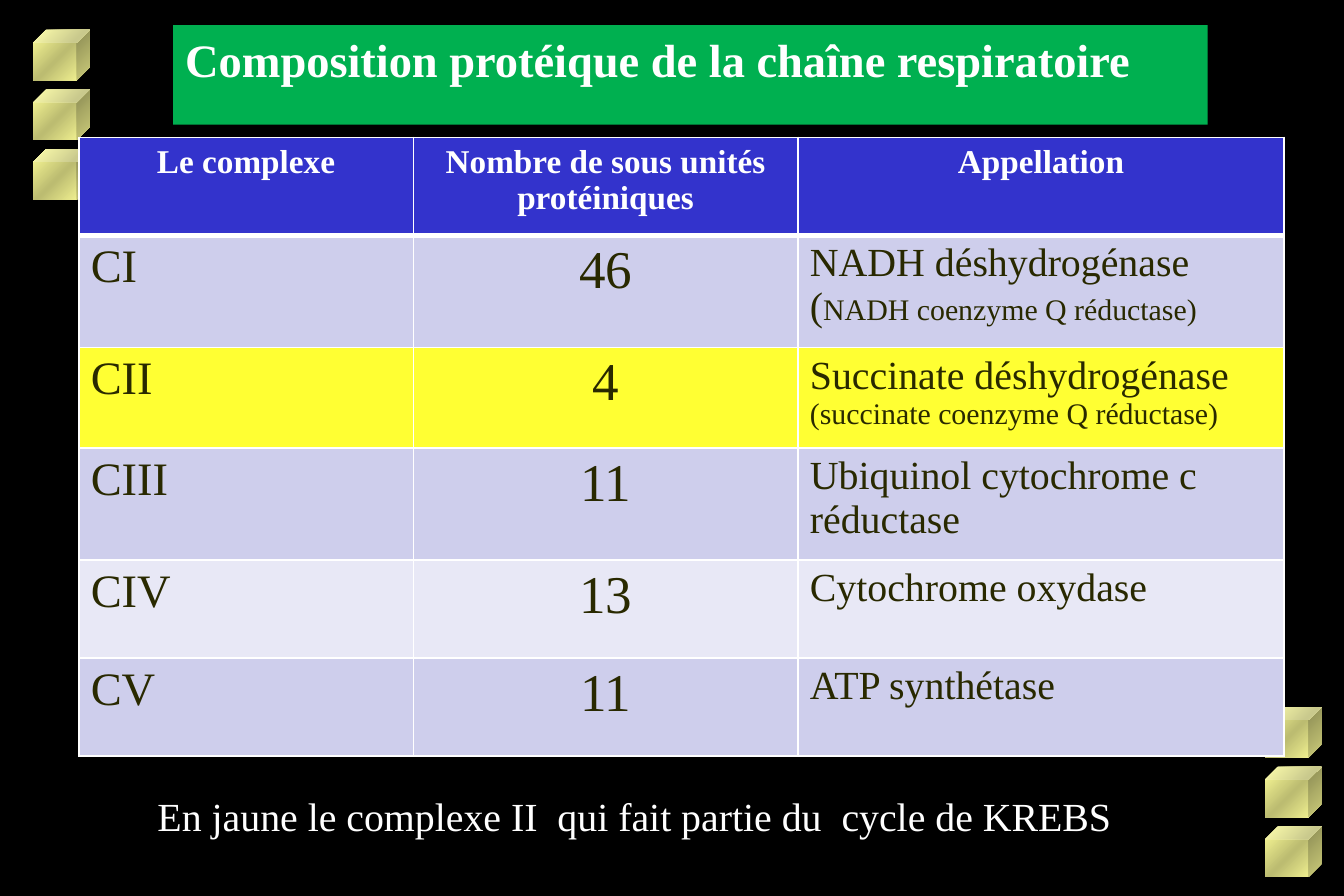
"""Build the slide on the protein composition of the respiratory chain."""
from copy import deepcopy
from dataclasses import dataclass

from lxml.etree import SubElement
from pptx import Presentation
from pptx.dml.color import RGBColor
from pptx.enum.shapes import MSO_SHAPE
from pptx.enum.text import MSO_ANCHOR, MSO_AUTO_SIZE, PP_ALIGN
from pptx.oxml.ns import qn
from pptx.util import Inches, Pt

FONT = "Times New Roman"
WHITE, BLACK, GREEN, BLUE = "FFFFFF", "000000", "00B050", "3333CC"
INK, LAVENDER, PALE, YELLOW = "292900", "CECEEC", "E8E8F6", "FFFF33"
CUBE_LIGHT, CUBE_DARK = "FFFF99", "BCBC71"
HEADINGS = ("Le complexe", "Nombre de sous unités protéiniques", "Appellation")
COLUMN_WIDTHS = (2.8, 3.22, 4.07)
HEADER_HEIGHT = 0.82


@dataclass(frozen=True)
class Complex:
    name: str
    subunits: int
    title: str
    detail: str
    fill: str
    height: float


@dataclass(frozen=True)
class CubeStack:
    left: float
    top: float


COMPLEXES = (
    Complex("CI", 46, "NADH déshydrogénase (", "NADH coenzyme Q réductase)", LAVENDER, 0.94),
    Complex("CII", 4, "Succinate déshydrogénase ", "(succinate coenzyme Q réductase)", YELLOW, 0.84),
    Complex("CIII", 11, "Ubiquinol cytochrome c réductase", "", LAVENDER, 0.94),
    Complex("CIV", 13, "Cytochrome oxydase", "", PALE, 0.82),
    Complex("CV", 11, "ATP synthétase", "", LAVENDER, 0.82),
)
CUBE_STACKS = (CubeStack(0.28, 0.25), CubeStack(10.59, 5.92))


def color(value: str) -> RGBColor:
    return RGBColor.from_string(value)


def paint(target, value: str) -> None:
    target.fill.solid()
    target.fill.fore_color.rgb = color(value)


def style(font, size: float, value: str, bold: bool = False) -> None:
    font.name, font.size, font.bold = FONT, Pt(size), bold
    font.color.rgb = color(value)


def place(shape, left: float, top: float, width: float, height: float) -> None:
    shape.left, shape.top = Inches(left), Inches(top)
    shape.width, shape.height = Inches(width), Inches(height)


def write_line(shape, text: str, size: float, bold: bool = False) -> None:
    frame = shape.text_frame
    frame.text, frame.word_wrap = text, True
    frame.auto_size = MSO_AUTO_SIZE.SHAPE_TO_FIT_TEXT
    frame.vertical_anchor = MSO_ANCHOR.TOP
    para = frame.paragraphs[0]
    para.alignment = PP_ALIGN.LEFT
    style(para.font, size, WHITE, bold)


def add_cubes(page, stack: CubeStack) -> None:
    for index in range(3):
        cube = page.shapes.add_shape(
            MSO_SHAPE.CUBE, Inches(stack.left), Inches(stack.top + index * 0.5),
            Inches(0.47), Inches(0.42))
        cube.shadow.inherit = False
        cube.line.fill.background()
        cube.fill.gradient()
        cube.fill.gradient_angle = 315
        stop_list = cube.element.spPr.find(qn("a:gradFill")).find(qn("a:gsLst"))
        stop_list.append(deepcopy(stop_list[-1]))
        stops = zip(cube.fill.gradient_stops, (0, 0.5, 1), (CUBE_LIGHT, CUBE_DARK, CUBE_LIGHT))
        for stop, position, value in stops:
            stop.position = position
            stop.color.rgb = color(value)


def set_borders(cell, top: float, bottom: float) -> None:
    properties = cell._tc.get_or_add_tcPr()
    sides = (("a:lnL", 1), ("a:lnR", 1), ("a:lnT", top), ("a:lnB", bottom))
    for index, (tag, width) in enumerate(sides):
        line = SubElement(properties, qn(tag), w=str(Pt(width)))
        SubElement(SubElement(line, qn("a:solidFill")), qn("a:srgbClr"), val=WHITE)
        properties.insert(index, line)


def fill_cell(cell, text: str, size: float, value: str, fill: str,
              centred: bool = False, bold: bool = False):
    cell.text = text
    para = cell.text_frame.paragraphs[0]
    para.alignment = PP_ALIGN.CENTER if centred else PP_ALIGN.LEFT
    style(para.font, size, value, bold)
    paint(cell, fill)
    return para


def add_composition_table(page) -> None:
    heights = (HEADER_HEIGHT, *(item.height for item in COMPLEXES))
    table = page.shapes.add_table(
        len(heights), len(HEADINGS), Inches(0.66), Inches(1.15),
        Inches(sum(COLUMN_WIDTHS)), Inches(sum(heights))).table
    for column, width in zip(table.columns, COLUMN_WIDTHS):
        column.width = Inches(width)
    for row, height in zip(table.rows, heights):
        row.height = Inches(height)
    for index, heading in enumerate(HEADINGS):
        fill_cell(table.cell(0, index), heading, 20, WHITE, BLUE, centred=True, bold=True)
    for index, item in enumerate(COMPLEXES, start=1):
        fill_cell(table.cell(index, 0), item.name, 28, INK, item.fill)
        fill_cell(table.cell(index, 1), str(item.subunits), 32, INK, item.fill, centred=True)
        para = fill_cell(table.cell(index, 2), item.title, 24, INK, item.fill)
        if item.detail:
            span = para.add_run()
            span.text = item.detail
            span.font.size = Pt(18)
    for index, row in enumerate(table.rows):
        for cell in row.cells:
            set_borders(cell, 3 if index == 1 else 1, 3 if index == 0 else 1)


def main() -> None:
    deck = Presentation()
    deck.slide_width, deck.slide_height = Inches(11.25), Inches(7.5)
    page = deck.slides.add_slide(deck.slide_layouts[5])
    paint(page.background, BLACK)
    for stack in CUBE_STACKS:
        add_cubes(page, stack)
    add_composition_table(page)
    title = page.shapes.title
    place(title, 1.45, 0.21, 8.66, 0.57)
    paint(title, GREEN)
    write_line(title, "Composition protéique de la chaîne respiratoire", 28, bold=True)
    box = page.shapes.add_textbox(Inches(1.22), Inches(6.58), Inches(8.27), Inches(0.5))
    write_line(box, "En jaune le complexe II  qui fait partie du  cycle de KREBS", 24)
    deck.save("out.pptx")


if __name__ == "__main__":
    main()
